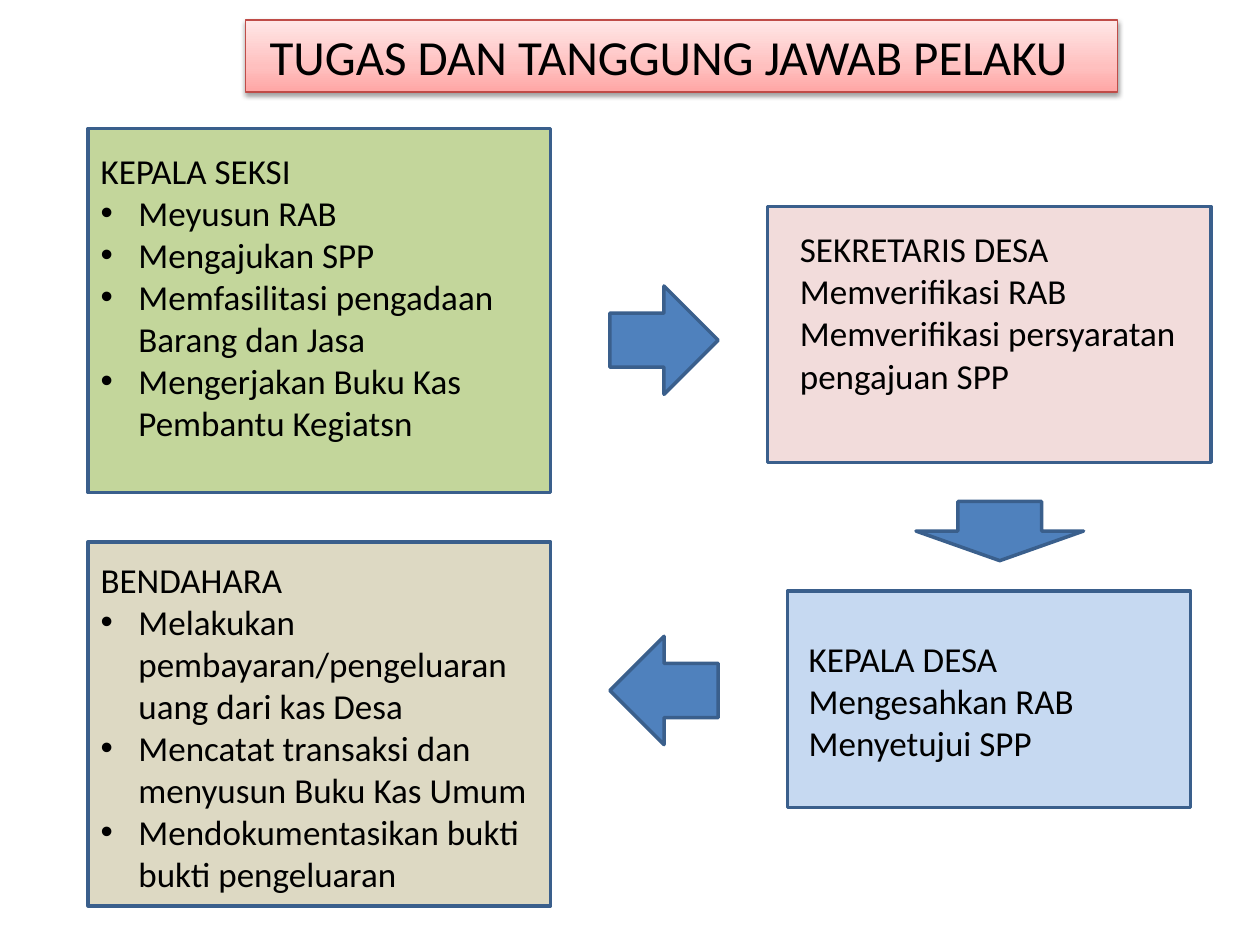
from dataclasses import dataclass

from lxml.etree import SubElement
from pptx import Presentation
from pptx.dml.color import RGBColor
from pptx.enum.shapes import MSO_SHAPE
from pptx.enum.text import MSO_ANCHOR, MSO_AUTO_SIZE, PP_ALIGN
from pptx.oxml.ns import qn
from pptx.util import Inches, Pt


@dataclass(frozen=True)
class Theme:
    font: str = "Calibri"
    title_size: int = 28
    body_size: int = 20
    text: str = "000000"
    outline: str = "3A5F8C"
    arrow: str = "4F81BD"
    green: str = "C3D69B"
    tan: str = "DDD9C3"
    pink: str = "F2DCDB"
    blue: str = "C6D9F1"
    title_line: str = "BF4C48"
    title_stops: tuple = ((0, "FFA6A5"), (35, "FFC0BF"), (100, "FFE7E7"))


class SlideBuilder:
    def __init__(self, page, theme):
        self.page = page
        self.theme = theme

    def shape(self, kind, place, fill, line, width=2):
        shape = self.page.shapes.add_shape(kind, *map(Inches, place))
        shape.shadow.inherit = False
        if fill:
            shape.fill.solid()
            shape.fill.fore_color.rgb = RGBColor.from_string(fill)
        shape.line.color.rgb = RGBColor.from_string(line)
        shape.line.width = Pt(width)
        return shape

    def panel(self, place, fill):
        return self.shape(MSO_SHAPE.RECTANGLE, place, fill, self.theme.outline)

    def arrow(self, kind, place, rotation=0):
        arrow = self.shape(kind, place, self.theme.arrow, self.theme.outline)
        arrow.rotation = rotation

    def style(self, para, size):
        para.alignment = PP_ALIGN.LEFT
        para.font.name = self.theme.font
        para.font.size = Pt(size)
        para.font.color.rgb = RGBColor.from_string(self.theme.text)

    def bullet(self, para):
        props = para._p.get_or_add_pPr()
        props.set("marL", str(Inches(0.3)))
        props.set("indent", str(Inches(-0.3)))
        SubElement(props, qn("a:buFont"), typeface="Arial")
        SubElement(props, qn("a:buChar"), char="•")

    def duties(self, place, role, tasks, bulleted=False, wrap=True):
        box = self.page.shapes.add_textbox(*map(Inches, place))
        frame = box.text_frame
        frame.word_wrap = wrap
        frame.auto_size = MSO_AUTO_SIZE.SHAPE_TO_FIT_TEXT
        heading = frame.paragraphs[0]
        heading.text = role
        self.style(heading, self.theme.body_size)
        for task in tasks:
            para = frame.add_paragraph()
            para.text = task
            if bulleted:
                self.bullet(para)
            self.style(para, self.theme.body_size)

    def title(self, place, text):
        banner = self.shape(MSO_SHAPE.RECTANGLE, place, None,
                            self.theme.title_line, 0.75)
        # Three-stop gradient, running upwards
        banner.fill.gradient()
        banner.fill.gradient_angle = 90
        props = banner._element.spPr
        stops = props.find(qn("a:gradFill")).find(qn("a:gsLst"))
        for stop in list(stops):
            stops.remove(stop)
        for position, color in self.theme.title_stops:
            stop = SubElement(stops, qn("a:gs"), pos=str(position * 1000))
            SubElement(stop, qn("a:srgbClr"), val=color)
        # Soft shadow below
        shadow = SubElement(props.find(qn("a:effectLst")), qn("a:outerShdw"),
                            blurRad=str(Pt(3.1)), dist=str(Pt(1.6)),
                            dir="5400000", rotWithShape="0")
        color = SubElement(shadow, qn("a:srgbClr"), val="000000")
        SubElement(color, qn("a:alpha"), val="38000")
        frame = banner.text_frame
        frame.word_wrap = True
        frame.margin_left = Inches(0.19)
        frame.vertical_anchor = MSO_ANCHOR.TOP
        para = frame.paragraphs[0]
        para.text = text
        self.style(para, self.theme.title_size)


def main():
    deck = Presentation()
    deck.slide_width, deck.slide_height = Inches(10), Inches(7.5)
    theme = Theme()
    builder = SlideBuilder(deck.slides.add_slide(deck.slide_layouts[6]), theme)

    builder.title((1.95, 0.16, 6.92, 0.57), "TUGAS DAN TANGGUNG JAWAB PELAKU")

    # Section head
    builder.panel((0.7, 1.02, 3.67, 2.89), theme.green)
    builder.duties((0.7, 1.14, 3.91, 2.46), "KEPALA SEKSI", [
        "Meyusun RAB",
        "Mengajukan SPP",
        "Memfasilitasi pengadaan Barang dan Jasa",
        "Mengerjakan Buku Kas Pembantu Kegiatsn",
    ], bulleted=True)

    # Village secretary
    builder.panel((6.09, 1.64, 3.52, 2.03), theme.pink)
    builder.duties((6.25, 1.76, 3.38, 1.45), "SEKRETARIS DESA", [
        "Memverifikasi RAB",
        "Memverifikasi persyaratan pengajuan SPP",
    ])

    # Village head
    builder.panel((6.25, 4.69, 3.2, 1.72), theme.blue)
    builder.duties((6.32, 5.01, 2.33, 1.11), "KEPALA DESA", [
        "Mengesahkan RAB",
        "Menyetujui SPP",
    ], wrap=False)

    # Treasurer
    builder.panel((0.7, 4.3, 3.67, 2.89), theme.tan)
    builder.duties((0.7, 4.38, 3.75, 2.79), "BENDAHARA", [
        "Melakukan pembayaran/pengeluaran uang dari kas Desa",
        "Mencatat transaksi dan menyusun Buku Kas Umum",
        "Mendokumentasikan bukti bukti pengeluaran",
    ], bulleted=True)

    # Flow between the roles
    builder.arrow(MSO_SHAPE.RIGHT_ARROW, (4.84, 2.27, 0.86, 0.86))
    builder.arrow(MSO_SHAPE.DOWN_ARROW, (7.27, 3.98, 1.33, 0.47))
    builder.arrow(MSO_SHAPE.RIGHT_ARROW, (4.84, 5.05, 0.86, 0.86), rotation=180)

    deck.save("out.pptx")


if __name__ == "__main__":
    main()
